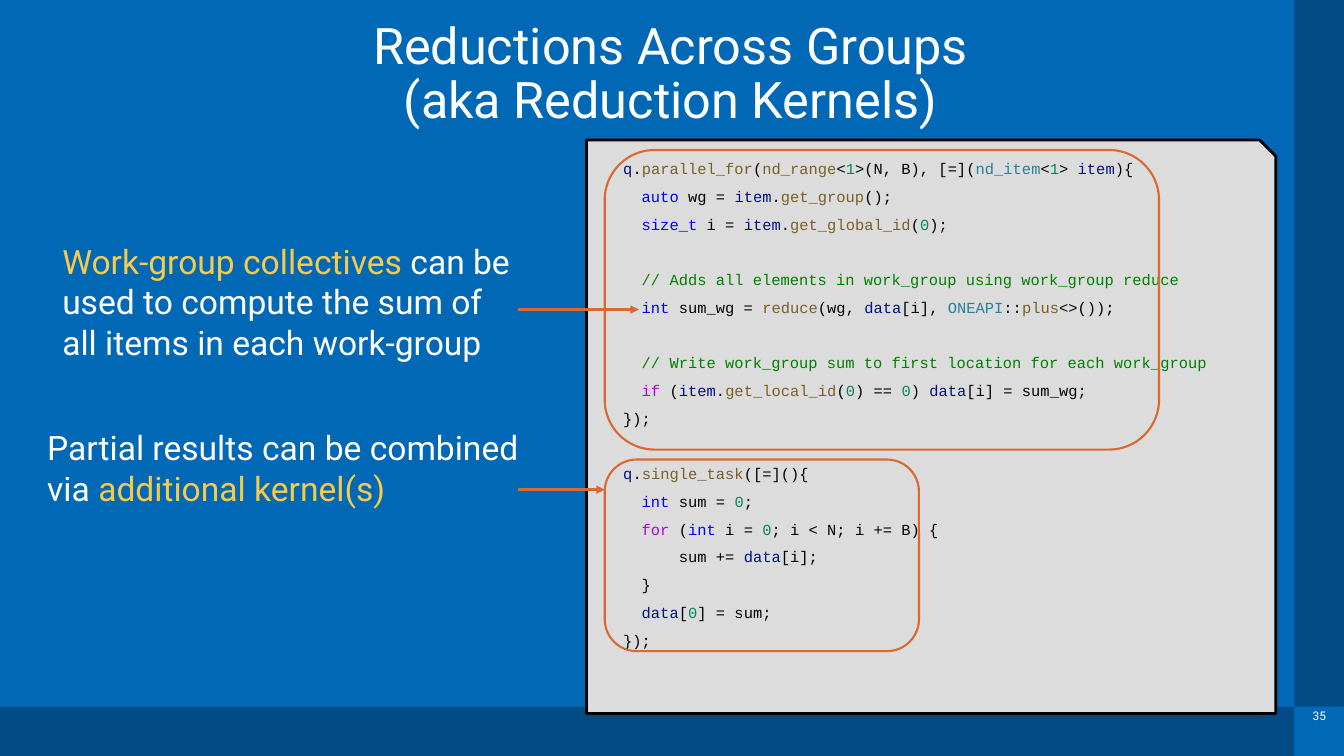
from lxml import etree
from pptx import Presentation
from pptx.dml.color import RGBColor
from pptx.enum.shapes import MSO_CONNECTOR, MSO_SHAPE
from pptx.enum.text import MSO_ANCHOR, PP_ALIGN
from pptx.oxml.ns import qn
from pptx.util import Cm, Pt

RECTANGLE = MSO_SHAPE.RECTANGLE
ROUNDED = MSO_SHAPE.ROUNDED_RECTANGLE
SNIPPED = MSO_SHAPE.SNIP_1_RECTANGLE
STRAIGHT = MSO_CONNECTOR.STRAIGHT
TOP, MIDDLE = MSO_ANCHOR.TOP, MSO_ANCHOR.MIDDLE
LEFT, CENTER = PP_ALIGN.LEFT, PP_ALIGN.CENTER

BLUE = RGBColor(0x00, 0x68, 0xB5)
DARK_BLUE = RGBColor(0x00, 0x4A, 0x86)
WHITE = RGBColor(0xFF, 0xFF, 0xFF)
YELLOW = RGBColor(0xF6, 0xCB, 0x4B)
ORANGE = RGBColor(0xD9, 0x69, 0x30)
GRAY = RGBColor(0xDC, 0xDC, 0xDC)
PLAIN = RGBColor(0x00, 0x00, 0x00)
VARIABLE = RGBColor(0x00, 0x10, 0x80)
FUNCTION = RGBColor(0x79, 0x5E, 0x26)
NUMBER = RGBColor(0x09, 0x86, 0x58)
CLASS = RGBColor(0x26, 0x7F, 0x99)
TYPE = RGBColor(0x00, 0x00, 0xFF)
COMMENT = RGBColor(0x00, 0x80, 0x00)
CONTROL = RGBColor(0xAF, 0x00, 0xDB)

BODY_FONT, CODE_FONT = "Roboto", "Courier New"
CODE_LINE_HEIGHT = 19.8

CODE_BLOCKS = [
    [
        [("  ", PLAIN), ("q", VARIABLE), (".", PLAIN), ("parallel_for", FUNCTION),
         ("(", PLAIN), ("nd_range", FUNCTION), ("<", PLAIN), ("1", NUMBER),
         (">(N, B), [=](", PLAIN), ("nd_item", CLASS), ("<", PLAIN),
         ("1", NUMBER), ("> ", PLAIN), ("item", VARIABLE), ("){", PLAIN)],
        [("    auto ", TYPE), ("wg = ", PLAIN), ("item", VARIABLE),
         (".", PLAIN), ("get_group", FUNCTION), ("();", PLAIN)],
        [("    size_t ", TYPE), ("i = ", PLAIN), ("item", VARIABLE), (".", PLAIN),
         ("get_global_id", FUNCTION), ("(", PLAIN), ("0", NUMBER), (");", PLAIN)],
    ],
    [
        [("    // Adds all elements in work_group using work_group reduce", COMMENT)],
        [("    int ", TYPE), ("sum_wg = ", PLAIN), ("reduce", FUNCTION),
         ("(wg, ", PLAIN), ("data", VARIABLE), ("[i], ", PLAIN), ("ONEAPI", CLASS),
         ("::", PLAIN), ("plus", FUNCTION), ("<>());", PLAIN)],
    ],
    [
        [("    // Write work_group sum to first location for each work_group", COMMENT)],
        [("    if", CONTROL), (" (", PLAIN), ("item", VARIABLE), (".", PLAIN),
         ("get_local_id", FUNCTION), ("(", PLAIN), ("0", NUMBER), (") == ", PLAIN),
         ("0", NUMBER), (") ", PLAIN), ("data", VARIABLE), ("[i] = sum_wg;", PLAIN)],
        [("  });", PLAIN)],
    ],
    [
        [("  ", PLAIN), ("q", VARIABLE), (".", PLAIN), ("single_task", FUNCTION),
         ("([=](){", PLAIN)],
        [("    int", TYPE), (" sum = ", PLAIN), ("0", NUMBER), (";", PLAIN)],
        [("    for ", CONTROL), ("(", PLAIN), ("int", TYPE), (" i = ", PLAIN),
         ("0", NUMBER), ("; i < N; i += B) {", PLAIN)],
        [("        sum += ", PLAIN), ("data", VARIABLE), ("[i];", PLAIN)],
        [("    }", PLAIN)],
        [("    data", VARIABLE), ("[", PLAIN), ("0", NUMBER), ("] = sum;", PLAIN)],
        [("  });", PLAIN)],
    ],
]


class SlideBuilder:
    def __init__(self, presentation):
        self.slide = presentation.slides.add_slide(presentation.slide_layouts[6])
        fill = self.slide.background.fill
        fill.solid()
        fill.fore_color.rgb = BLUE

    def shape(self, kind, box, fill=None, line=None, line_width=1.5):
        shape = self.slide.shapes.add_shape(kind, *map(Cm, box))
        shape.shadow.inherit = False
        if fill is None:
            shape.fill.background()
        else:
            shape.fill.solid()
            shape.fill.fore_color.rgb = fill
        if line is None:
            shape.line.fill.background()
        else:
            shape.line.color.rgb = line
            shape.line.width = Pt(line_width)
        return shape

    def arrow(self, start, end, height):
        connector = self.slide.shapes.add_connector(
            STRAIGHT, Cm(start), Cm(height), Cm(end), Cm(height))
        connector.line.color.rgb = ORANGE
        connector.line.width = Pt(2)
        outline = connector.line._get_or_add_ln()
        etree.SubElement(outline, qn("a:tailEnd"), type="triangle")
        etree.SubElement(connector._element.spPr, qn("a:effectLst"))

    def frame(self, box, inset=0, anchor=TOP):
        frame = self.slide.shapes.add_textbox(*map(Cm, box)).text_frame
        frame.word_wrap = True
        frame.vertical_anchor = anchor
        frame.margin_left = frame.margin_right = Cm(inset)
        frame.margin_top = frame.margin_bottom = Cm(inset)
        return frame

    def runs(self, paragraph, runs, size, font=BODY_FONT):
        for text, color in runs:
            run = paragraph.add_run()
            run.text = text
            run.font.name = font
            run.font.size = Pt(size)
            run.font.color.rgb = color

    def text(self, box, runs, size, spacing=1.0, align=LEFT, anchor=TOP, inset=0):
        paragraph = self.frame(box, inset, anchor).paragraphs[0]
        paragraph.alignment = align
        paragraph.line_spacing = spacing
        self.runs(paragraph, runs, size)
        return paragraph

    def code(self, box, blocks):
        frame = self.frame(box)
        for block_index, block in enumerate(blocks):
            for line_index, line in enumerate(block):
                first = block_index == line_index == 0
                paragraph = frame.paragraphs[0] if first else frame.add_paragraph()
                paragraph.line_spacing = 1.5
                if line_index == 0 and not first:
                    paragraph.space_before = Pt(CODE_LINE_HEIGHT)
                self.runs(paragraph, line, 11, CODE_FONT)


def main():
    presentation = Presentation()
    presentation.slide_width = Cm(33.87)
    presentation.slide_height = Cm(19.05)
    builder = SlideBuilder(presentation)

    builder.shape(RECTANGLE, (0, 17.81, 32.62, 1.24), DARK_BLUE)
    builder.shape(RECTANGLE, (32.62, 17.81, 1.25, 1.24), BLUE)
    builder.shape(RECTANGLE, (32.62, 0, 1.25, 17.81), DARK_BLUE)
    builder.text((33, 17.42, 0.58, 1.3), [("35", WHITE)], 8.5,
                 spacing=0.9, anchor=MIDDLE, inset=0.08)

    title = builder.text((1.6, 0.53, 30.6, 2.44), [("Reductions Across Groups", WHITE)],
                         36, spacing=0.9, align=CENTER)
    title.add_line_break()
    builder.runs(title, [("(aka Reduction Kernels)", WHITE)], 36)

    builder.text((1.57, 6.07, 11.48, 3.43), [
        ("Work-group collectives", YELLOW),
        (" can be used to compute the sum of all items in each work-group", WHITE)], 24)

    panel = builder.shape(SNIPPED, (14.78, 3.53, 17.37, 14.45), GRAY, PLAIN, 2)
    panel.adjustments[0] = 0.028
    builder.code((15.24, 3.78, 16.92, 12.62), CODE_BLOCKS)

    builder.shape(ROUNDED, (15.24, 3.78, 13.97, 7.55), line=ORANGE)
    builder.arrow(13.06, 16.1, 7.8)
    builder.shape(ROUNDED, (15.24, 11.58, 7.92, 4.83), line=ORANGE)
    builder.arrow(13.06, 15.24, 12.34)

    builder.text((1.19, 10.77, 11.89, 3.43), [
        ("Partial results can be combined via ", WHITE),
        ("additional kernel(s)", YELLOW)], 24)

    presentation.save("out.pptx")


if __name__ == "__main__":
    main()
